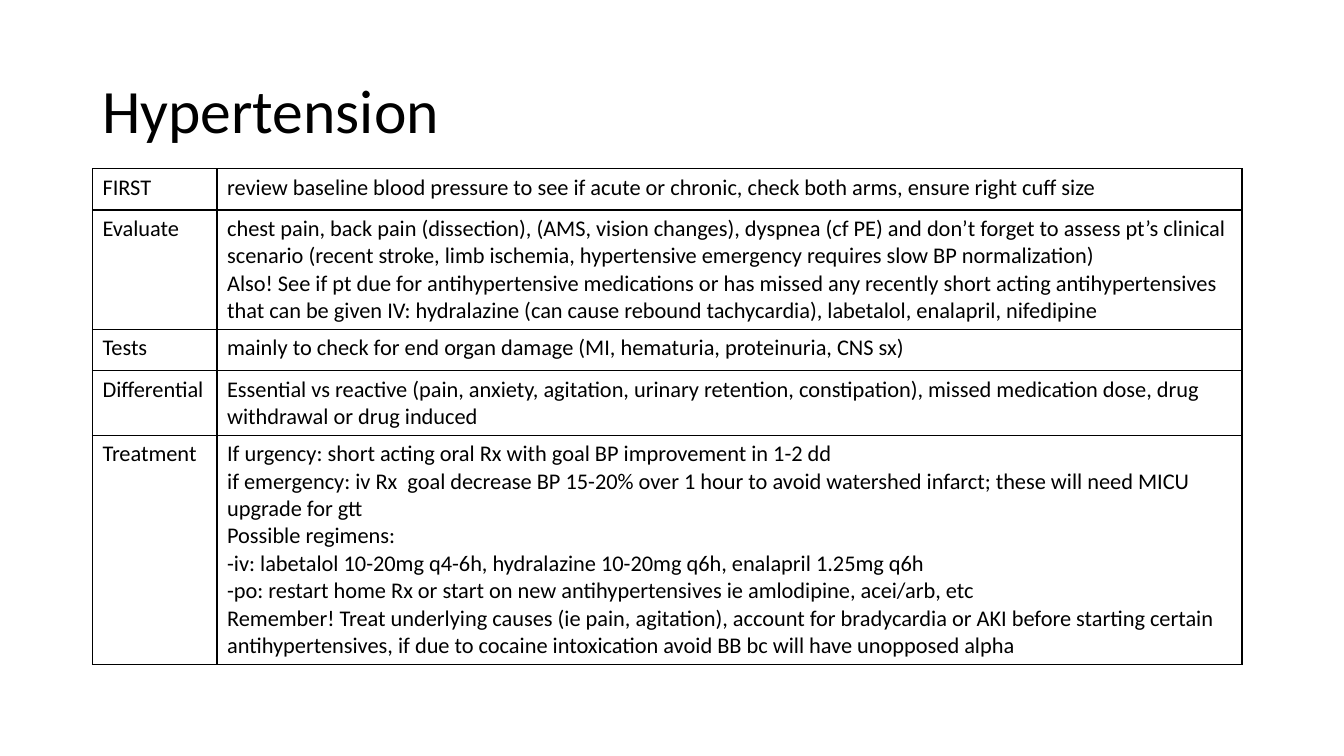
from dataclasses import dataclass

from lxml.etree import SubElement
from pptx import Presentation
from pptx.dml.color import RGBColor
from pptx.enum.text import MSO_ANCHOR as Anchor
from pptx.oxml.ns import qn
from pptx.util import Cm, Pt


@dataclass(frozen=True)
class Theme:
    font: str = "Calibri"
    ink: str = "000000"
    paper: str = "FFFFFF"
    title_size: int = 44
    body_size: int = 16
    rule_width: int = 1


@dataclass(frozen=True)
class Box:
    left: float
    top: float
    width: float
    height: float

    def lengths(self):
        return Cm(self.left), Cm(self.top), Cm(self.width), Cm(self.height)


THEME = Theme()
LABEL_WIDTH = 3.14

# Each step: label, row height in cm, paragraphs
STEPS = [
    ("FIRST", 1.04, [
        "review baseline blood pressure to see if acute or chronic, check both arms, "
        "ensure right cuff size",
    ]),
    ("Evaluate", 3.01, [
        "chest pain, back pain (dissection), (AMS, vision changes), dyspnea (cf PE) and "
        "don’t forget to assess pt’s clinical scenario (recent stroke, limb ischemia, "
        "hypertensive emergency requires slow BP normalization)",
        "Also! See if pt due for antihypertensive medications or has missed any recently "
        "short acting antihypertensives that can be given IV: hydralazine (can cause "
        "rebound tachycardia), labetalol, enalapril, nifedipine",
    ]),
    ("Tests", 1.04, [
        "mainly to check for end organ damage (MI, hematuria, proteinuria, CNS sx)",
    ]),
    ("Differential", 1.63, [
        "Essential vs reactive (pain, anxiety, agitation, urinary retention, "
        "constipation), missed medication dose, drug withdrawal or drug induced",
    ]),
    ("Treatment", 5.77, [
        "If urgency: short acting oral Rx with goal BP improvement in 1-2 dd",
        "if emergency: iv Rx  goal decrease BP 15-20% over 1 hour to avoid watershed "
        "infarct; these will need MICU upgrade for gtt",
        "Possible regimens:",
        "-iv: labetalol 10-20mg q4-6h, hydralazine 10-20mg q6h, enalapril 1.25mg q6h",
        "-po: restart home Rx or start on new antihypertensives ie amlodipine, "
        "acei/arb, etc",
        "Remember! Treat underlying causes (ie pain, agitation), account for bradycardia "
        "or AKI before starting certain antihypertensives, if due to cocaine "
        "intoxication avoid BB bc will have unopposed alpha",
    ]),
]


def write(frame, lines, size):
    for index, line in enumerate(lines):
        para = frame.add_paragraph() if index else frame.paragraphs[0]
        span = para.add_run()
        span.text = line
        span.font.name = THEME.font
        span.font.size = Pt(size)
        span.font.color.rgb = RGBColor.from_string(THEME.ink)


def rule_cell(cell):
    """Draw a thin line on all four sides of a cell."""
    properties = cell._tc.get_or_add_tcPr()
    for position, side in enumerate(("a:lnL", "a:lnR", "a:lnT", "a:lnB")):
        line = SubElement(properties, qn(side), w=str(Pt(THEME.rule_width)))
        fill = SubElement(line, qn("a:solidFill"))
        SubElement(fill, qn("a:srgbClr"), val=THEME.ink)
        properties.insert(position, line)  # lines come before the fill


def add_title(page, box, text):
    frame = page.shapes.add_textbox(*box.lengths()).text_frame
    frame.word_wrap = True
    frame.vertical_anchor = Anchor.MIDDLE
    write(frame, [text], THEME.title_size)
    frame.paragraphs[0].line_spacing = 0.9


def add_steps(page, box, steps):
    table = page.shapes.add_table(len(steps), 2, *box.lengths()).table
    table.first_row = table.horz_banding = False
    table.columns[0].width = Cm(LABEL_WIDTH)
    table.columns[1].width = Cm(box.width - LABEL_WIDTH)
    for row, (label, height, lines) in zip(table.rows, steps):
        row.height = Cm(height)
        for cell, content in zip(row.cells, ([label], lines)):
            cell.fill.solid()
            cell.fill.fore_color.rgb = RGBColor.from_string(THEME.paper)
            rule_cell(cell)
            write(cell.text_frame, content, THEME.body_size)


def main():
    deck = Presentation()
    deck.slide_width, deck.slide_height = Cm(33.87), Cm(19.05)
    page = deck.slides.add_slide(deck.slide_layouts[6])

    # Heading
    add_title(page, Box(2.33, 1.01, 29.21, 3.68), "Hypertension")

    # Work-up table
    table_height = sum(height for _, height, _ in STEPS)
    add_steps(page, Box(2.33, 4.25, 28.97, table_height), STEPS)

    deck.save("out.pptx")


if __name__ == "__main__":
    main()
